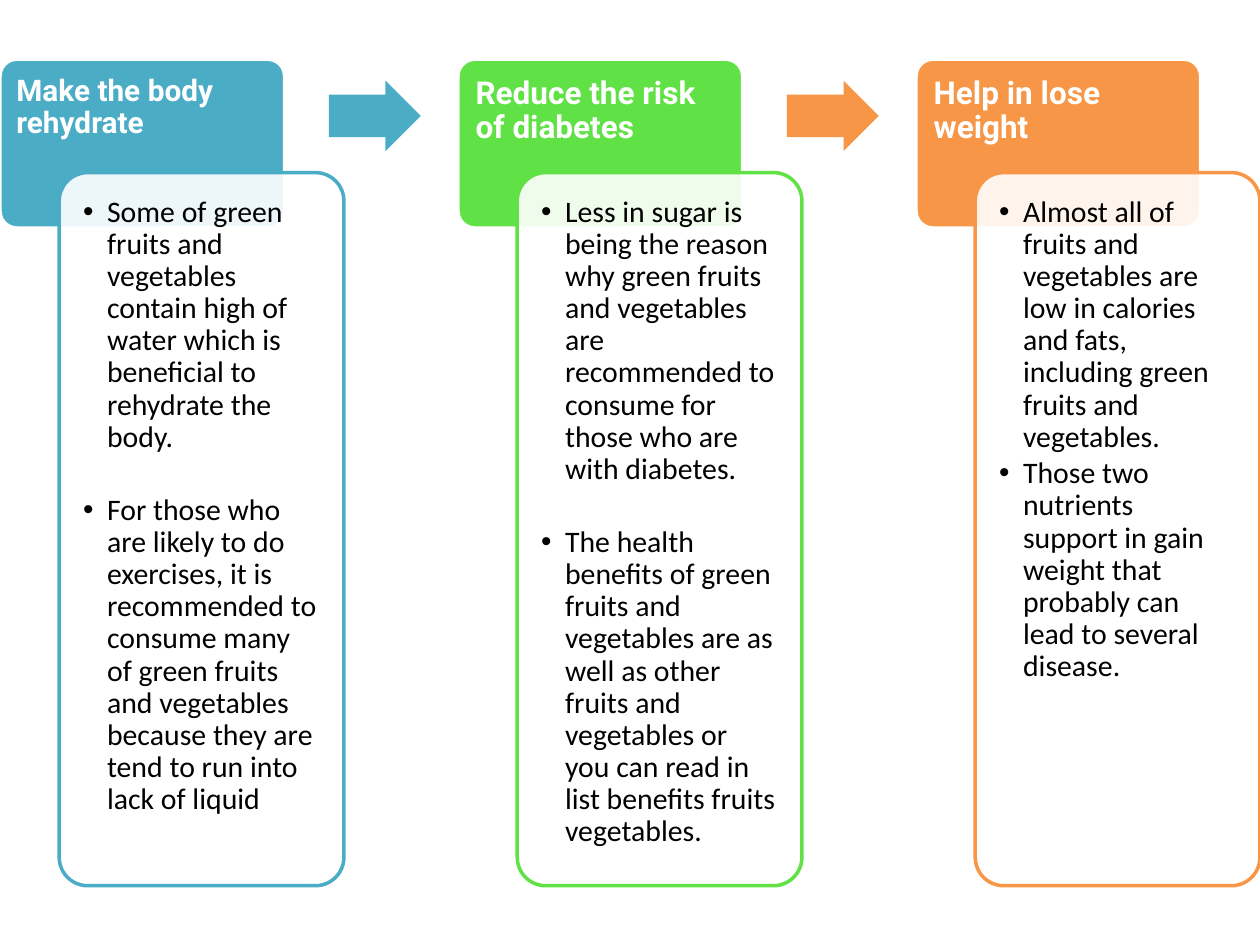
from lxml import etree
from pptx import Presentation
from pptx.dml.color import RGBColor
from pptx.enum.shapes import MSO_SHAPE
from pptx.oxml.ns import qn
from pptx.util import Inches, Pt

ROUND, ARROW = MSO_SHAPE.ROUNDED_RECTANGLE, MSO_SHAPE.RIGHT_ARROW
WHITE, BLACK = "FFFFFF", "000000"

# heading, heading size, heading inset, colour, gap between points (pt), points
STEPS = [
    ("Make the body rehydrate", 17, 0.13, "4BACC6", 23.4, [
        "Some of green fruits and vegetables contain high of water which is "
        "beneficial to rehydrate the body.",
        "For those who are likely to do exercises, it is recommended to consume "
        "many of green fruits and vegetables because they are tend to run into "
        "lack of liquid"]),
    ("Reduce the risk of diabetes", 18, 0.14, "60E146", 23.4, [
        "Less in sugar is being the reason why green fruits and vegetables are "
        "recommended to consume for those who are with diabetes.",
        "The health benefits of green fruits and vegetables are as well as other "
        "fruits and vegetables or you can read in list benefits fruits "
        "vegetables."]),
    ("Help in lose weight", 18, 0.14, "F79646", 2.55, [
        "Almost all of fruits and vegetables are low in calories and fats, "
        "including green fruits and vegetables.",
        "Those two nutrients support in gain weight that probably can lead to "
        "several disease."]),
]
ARROWS = ["4BACC6", "F79646"]
STEP = 3.635  # distance from one column to the next


def rgb(code):
    return RGBColor.from_string(code)


def add_box(kind, spot, fill, line=None, adjust=(0.1,), alpha=None):
    box = slide.shapes.add_shape(kind, *map(Inches, spot))
    box.shadow.inherit = False
    for i, part in enumerate(adjust):
        box.adjustments[i] = part
    box.fill.solid()
    box.fill.fore_color.rgb = rgb(fill)
    if alpha:
        tint = box.fill._xPr.find(".//" + qn("a:srgbClr"))
        etree.SubElement(tint, qn("a:alpha")).set("val", str(alpha * 1000))
    if line:
        box.line.color.rgb = rgb(line)
        box.line.width = Pt(2)
    else:
        box.line.fill.background()


def add_text(spot, lines, size, font, color, bold=False, inset=0.13,
             base=0.13, gap=0, bullet=False):
    frame = slide.shapes.add_textbox(*map(Inches, spot)).text_frame
    frame.word_wrap = True
    frame.margin_left = frame.margin_right = frame.margin_top = Inches(inset)
    frame.margin_bottom = Inches(base)
    for i, line in enumerate(lines):
        para = frame.paragraphs[0] if i == 0 else frame.add_paragraph()
        para.line_spacing = 0.9
        para.space_after = Pt(gap)
        run = para.add_run()
        run.text = line
        run.font.size, run.font.name, run.font.bold = Pt(size), font, bold
        run.font.color.rgb = rgb(color)
        if bullet:
            props = para._p.get_or_add_pPr()
            props.set("marL", str(Inches(0.19)))
            props.set("indent", str(-Inches(0.19)))
            etree.SubElement(props, qn("a:buFont")).set("typeface", "Arial")
            etree.SubElement(props, qn("a:buChar")).set("char", "•")


deck = Presentation()
deck.slide_width, deck.slide_height = Inches(10), Inches(7.5)
slide = deck.slides.add_slide(deck.slide_layouts[6])

for i, (head, size, inset, color, gap, points) in enumerate(STEPS):
    left = i * STEP
    add_box(ROUND, (left, 0.47, 2.26, 1.34), color, WHITE)
    add_text((left, 0.47, 2.26, 0.89), [head], size, "Roboto", WHITE,
             bold=True, inset=inset, base=0.07)
    add_box(ROUND, (left + 0.47, 1.37, 2.26, 5.66), WHITE, color, alpha=90)
    add_text((left + 0.53, 1.43, 2.13, 5.53), points, 17, "Calibri", BLACK,
             gap=gap, bullet=True)

for i, color in enumerate(ARROWS):
    add_box(ARROW, (2.61 + i * STEP, 0.64, 0.73, 0.56), color, adjust=(0.6, 0.5))

deck.save("out.pptx")
